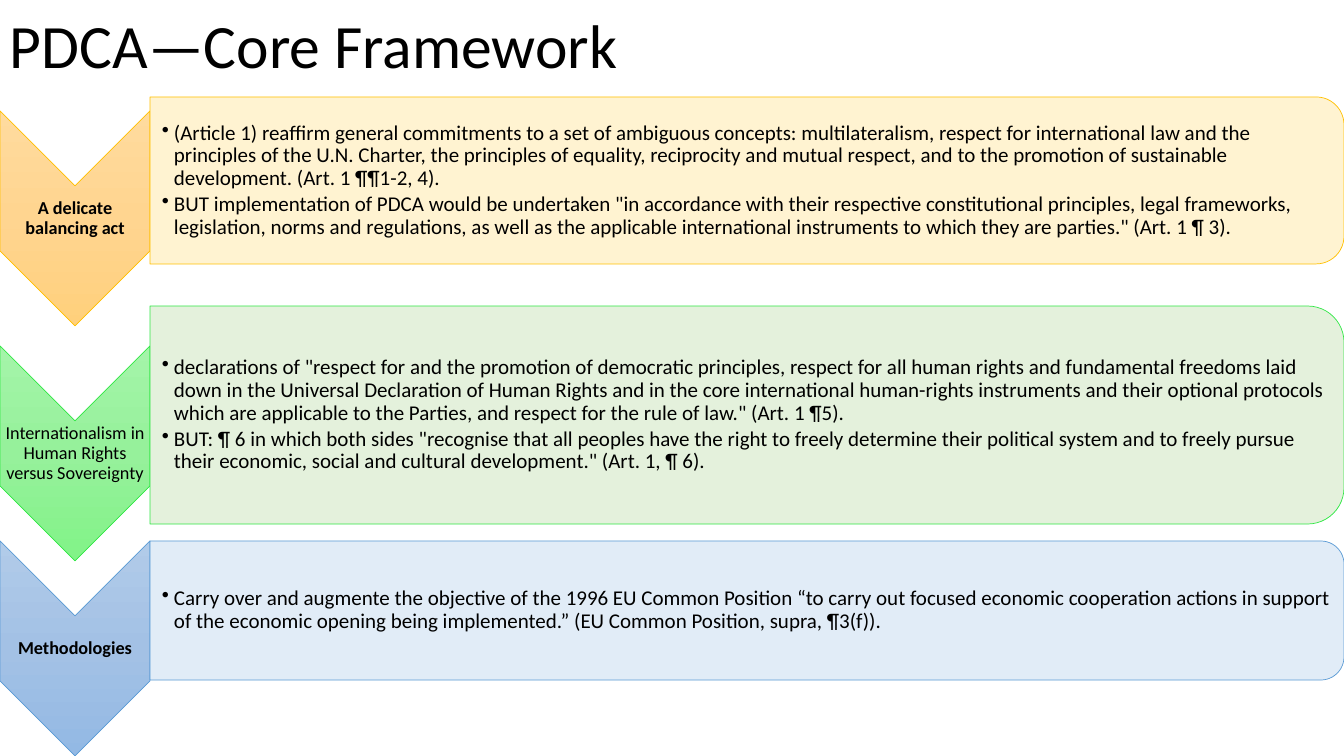
from dataclasses import dataclass

from lxml import etree
from pptx import Presentation
from pptx.dml.color import RGBColor
from pptx.enum.shapes import MSO_SHAPE
from pptx.enum.text import MSO_ANCHOR, PP_ALIGN
from pptx.oxml import parse_xml
from pptx.oxml.ns import nsdecls, qn
from pptx.util import Emu, Pt

PX = 914400 / 100.8
SLIDE_WIDTH, SLIDE_HEIGHT = 1344, 756
CHEVRON_WIDTH, CHEVRON_HEIGHT = 150, 215
LABEL_OFFSET, LABEL_HEIGHT = 75, 65
BULLET_INDENT = 12
FONT = "Calibri"

CHEVRON = MSO_SHAPE.CHEVRON
ROUNDED_PANEL = MSO_SHAPE.ROUND_2_SAME_RECTANGLE
MIDDLE = MSO_ANCHOR.MIDDLE
LEFT, CENTER = PP_ALIGN.LEFT, PP_ALIGN.CENTER

BLACK = RGBColor(0x00, 0x00, 0x00)
GOLD = RGBColor(0xFF, 0xC0, 0x00)
GREEN = RGBColor(0x30, 0xE8, 0x45)
BLUE = RGBColor(0x5B, 0x9B, 0xD5)
PALE_GOLD = RGBColor(0xFF, 0xF2, 0xCC)
PALE_GREEN = RGBColor(0xE2, 0xF0, 0xD9)
PALE_BLUE = RGBColor(0xDE, 0xEB, 0xF7)
GOLD_GRADIENT = (RGBColor(0xFF, 0xDB, 0x9E), RGBColor(0xFF, 0xD5, 0x90), RGBColor(0xFF, 0xD0, 0x7C))
GREEN_GRADIENT = (RGBColor(0xA4, 0xF4, 0xA9), RGBColor(0x96, 0xF1, 0x9B), RGBColor(0x82, 0xF3, 0x88))
BLUE_GRADIENT = (RGBColor(0xB1, 0xCB, 0xE9), RGBColor(0xA3, 0xC1, 0xE5), RGBColor(0x93, 0xB9, 0xE4))


@dataclass
class Section:
    """One chevron label with its panel of bullet points."""
    label: str
    bold: bool
    chevron_top: int
    panel_top: int
    panel_height: int
    line: RGBColor
    gradient: tuple
    fill: RGBColor
    points: list


SECTIONS = [
    Section("A delicate balancing act", True, 111, 97, 167, GOLD, GOLD_GRADIENT, PALE_GOLD, [
        "(Article 1) reaffirm general commitments to a set of ambiguous concepts: multilateralism, "
        "respect for international law and the principles of the U.N. Charter, the principles of "
        "equality, reciprocity and mutual respect, and to the promotion of sustainable development. "
        "(Art. 1 ¶¶1-2, 4).",
        'BUT implementation of PDCA would be undertaken "in accordance with their respective '
        "constitutional principles, legal frameworks, legislation, norms and regulations, as well as "
        'the applicable international instruments to which they are parties." (Art. 1 ¶ 3).',
    ]),
    Section("Internationalism in Human Rights versus Sovereignty", False, 346, 306, 218,
            GREEN, GREEN_GRADIENT, PALE_GREEN, [
        'declarations of "respect for and the promotion of democratic principles, respect for all '
        "human rights and fundamental freedoms laid down in the Universal Declaration of Human Rights "
        "and in the core international human-rights instruments and their optional protocols which "
        'are applicable to the Parties, and respect for the rule of law." (Art. 1 ¶5).',
        'BUT: ¶ 6 in which both sides "recognise that all peoples have the right to freely determine '
        "their political system and to freely pursue their economic, social and cultural "
        'development." (Art. 1, ¶ 6).',
    ]),
    Section("Methodologies", True, 541, 541, 139, BLUE, BLUE_GRADIENT, PALE_BLUE, [
        "Carry over and augmente the objective of the 1996 EU Common Position “to carry out focused "
        "economic cooperation actions in support of the economic opening being implemented.” "
        "(EU Common Position, supra, ¶3(f)).",
    ]),
]


def px(length):
    """Turn pixels into EMU."""
    return Emu(round(length * PX))


def add_bullet(paragraph):
    """Give a paragraph a hanging round bullet."""
    properties = paragraph._p.get_or_add_pPr()
    properties.set("marL", str(px(BULLET_INDENT)))
    properties.set("indent", str(-px(BULLET_INDENT)))
    etree.SubElement(properties, qn("a:buChar"), char="•")


def add_text(slide, box, texts, *, size, bold=False, align=LEFT, bullets=False,
             margins=(1, 1, 1, 1), space_after=0):
    """Add a vertically centred text box with one paragraph per text."""
    frame = slide.shapes.add_textbox(*map(px, box)).text_frame
    frame.word_wrap = True
    frame.vertical_anchor = MIDDLE
    frame.margin_left, frame.margin_top, frame.margin_right, frame.margin_bottom = map(px, margins)
    for index, text in enumerate(texts):
        paragraph = frame.add_paragraph() if index else frame.paragraphs[0]
        if bullets:
            add_bullet(paragraph)
        paragraph.alignment = align
        paragraph.line_spacing = 0.9
        paragraph.space_after = Pt(space_after)
        run = paragraph.add_run()
        run.text = text
        run.font.name = FONT
        run.font.size = Pt(size)
        run.font.bold = bold
        run.font.color.rgb = BLACK


def add_turned_shape(slide, kind, box, line):
    """Add a shape turned by 90 degrees that covers the given box."""
    left, top, width, height = box
    shift = (width - height) / 2
    shape = slide.shapes.add_shape(kind, px(left + shift), px(top - shift), px(height), px(width))
    shape.rotation = 90
    shape.shadow.inherit = False
    shape.line.color.rgb = line
    shape.line.width = Pt(0.5)
    return shape


def fill_gradient(shape, colors):
    """Fill a shape with evenly spaced colours from top to bottom."""
    step = 100000 // (len(colors) - 1)
    stops = "".join(f'<a:gs pos="{index * step}"><a:srgbClr val="{color}"/></a:gs>'
                    for index, color in enumerate(colors))
    gradient = parse_xml(f'<a:gradFill {nsdecls("a")} rotWithShape="0"><a:gsLst>{stops}</a:gsLst>'
                         '<a:lin ang="5400000" scaled="0"/></a:gradFill>')
    shape._element.spPr.find(qn("a:prstGeom")).addnext(gradient)


def fill_translucent(shape, color):
    """Fill a shape with a colour at 90 percent opacity."""
    shape.fill.solid()
    shape.fill.fore_color.rgb = color
    color_element = shape._element.spPr.find(qn("a:solidFill")).find(qn("a:srgbClr"))
    etree.SubElement(color_element, qn("a:alpha"), val="90000")


def add_section(slide, section):
    """Add a chevron, its label, and the panel with bullet points."""
    chevron_box = (0, section.chevron_top, CHEVRON_WIDTH, CHEVRON_HEIGHT)
    fill_gradient(add_turned_shape(slide, CHEVRON, chevron_box, section.line), section.gradient)
    label_box = (0, section.chevron_top + LABEL_OFFSET, CHEVRON_WIDTH, LABEL_HEIGHT)
    add_text(slide, label_box, [section.label], size=13, bold=section.bold, align=CENTER)

    panel_width = SLIDE_WIDTH - CHEVRON_WIDTH
    panel_box = (CHEVRON_WIDTH, section.panel_top, panel_width, section.panel_height)
    fill_translucent(add_turned_shape(slide, ROUNDED_PANEL, panel_box, section.line), section.fill)
    inset = round(section.panel_height * 0.05)
    text_box = (CHEVRON_WIDTH, section.panel_top + inset,
                panel_width - inset, section.panel_height - 2 * inset)
    add_text(slide, text_box, section.points, size=15, bullets=True,
             margins=(12, 1, 1, 1), space_after=2.5)


def main():
    """Build and save the slide."""
    presentation = Presentation()
    presentation.slide_width = px(SLIDE_WIDTH)
    presentation.slide_height = px(SLIDE_HEIGHT)
    slide = presentation.slides.add_slide(presentation.slide_layouts[6])
    add_text(slide, (0, 0, 1252, 97), ["PDCA—Core Framework"], size=44, margins=(10, 5, 10, 5))
    for section in SECTIONS:
        add_section(slide, section)
    presentation.save("out.pptx")


if __name__ == "__main__":
    main()
